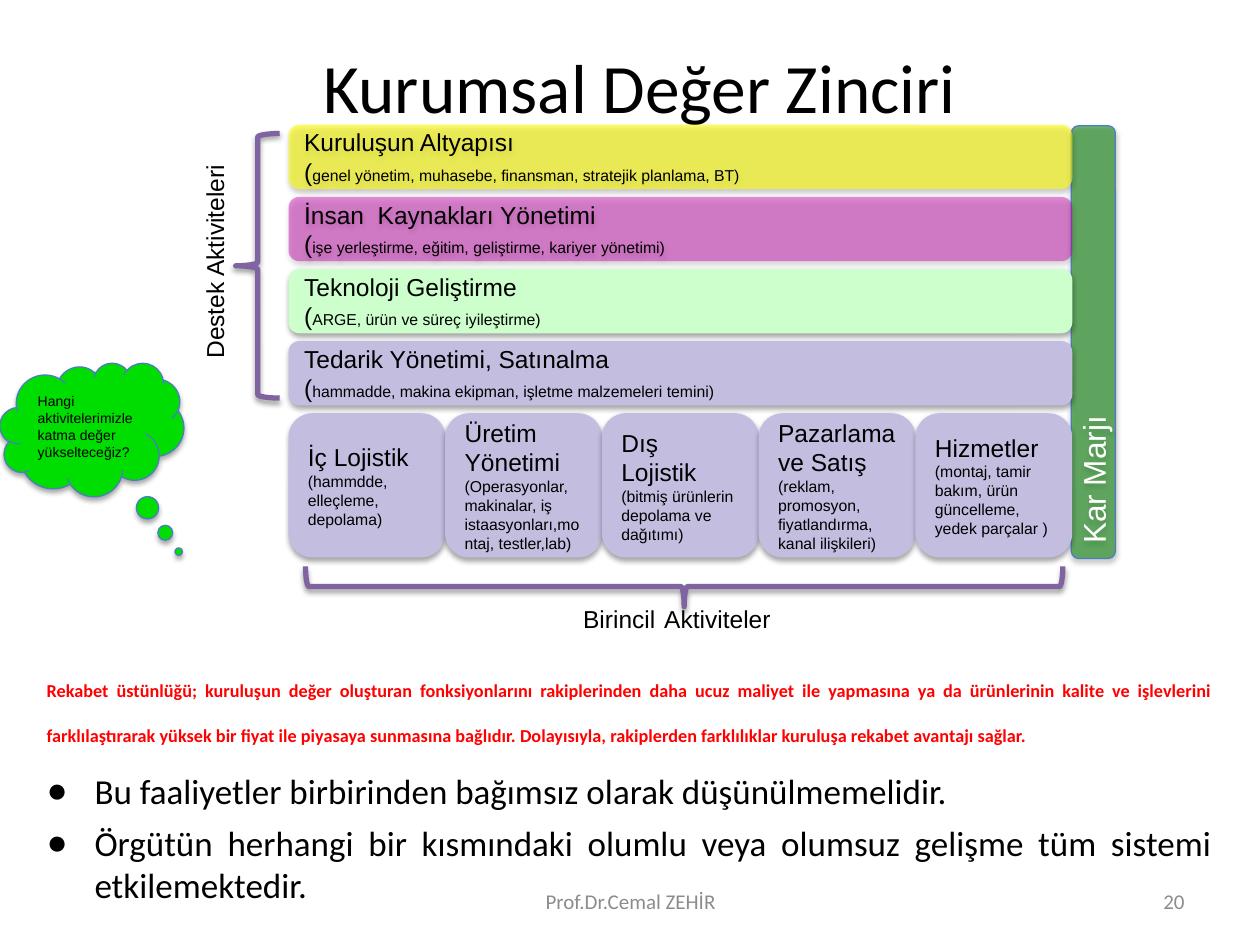
from lxml import etree
from pptx import Presentation
from pptx.dml.color import RGBColor
from pptx.enum.shapes import MSO_SHAPE
from pptx.enum.text import MSO_ANCHOR, MSO_AUTO_SIZE, PP_ALIGN
from pptx.oxml.ns import qn
from pptx.util import Inches, Pt

ROUND, BRACE, CLOUD = MSO_SHAPE.ROUNDED_RECTANGLE, MSO_SHAPE.LEFT_BRACE, MSO_SHAPE.CLOUD_CALLOUT
LEFT, MID, RIGHT, JUST = PP_ALIGN.LEFT, PP_ALIGN.CENTER, PP_ALIGN.RIGHT, PP_ALIGN.JUSTIFY
FIXED, CENTRE, TOP = MSO_AUTO_SIZE.NONE, MSO_ANCHOR.MIDDLE, MSO_ANCHOR.TOP

THEME = {
    "sans": "Arial", "text": "Calibri",
    "black": "000000", "white": "FFFFFF", "grey": "8C8C8C", "red": "FF0000",
    "lilac": "C3BDE0", "mint": "CCFFCC", "yellow": "FFFF00", "pink": "C706AE",
    "green": "008000", "lime": "00DD00", "edge": "4B7EBC", "brace": "8064A2",
    "title": 39.6, "list": 20, "large": 18, "head": 14, "foot": 12, "note": 9, "small": 8,
}

deck = Presentation()
deck.slide_width, deck.slide_height = Inches(10), Inches(7.5)
slide = deck.slides.add_slide(deck.slide_layouts[1])


def write(frame, paras, font="sans", tint="black", align=LEFT, wrap=True):
    frame.word_wrap = wrap
    frame.auto_size = FIXED
    for i, runs in enumerate(paras):
        para = frame.paragraphs[0] if i == 0 else frame.add_paragraph()
        para.alignment = align
        para.font.name = THEME[font]
        para.font.color.rgb = RGBColor.from_string(THEME[tint])
        sizes = {size for _, size in runs}
        for text, size in runs:
            run = para.add_run()
            run.text = text
            if len(sizes) > 1:
                run.font.size = Pt(THEME[size])
        if len(sizes) == 1:
            para.font.size = Pt(THEME[sizes.pop()])


def draw(kind, box, fill=None, alpha=100, line=None, width=0.75, turn=0, shade=35):
    shape = slide.shapes.add_shape(kind, *map(Inches, box))
    shape.rotation = turn
    if fill:
        shape.fill.solid()
        shape.fill.fore_color.rgb = RGBColor.from_string(THEME[fill])
        if alpha < 100:
            tone = shape._element.spPr.find(".//" + qn("a:srgbClr"))
            etree.SubElement(tone, qn("a:alpha"), val=str(alpha * 1000))
    else:
        shape.fill.background()
    if line:
        shape.line.color.rgb = RGBColor.from_string(THEME[line])
        shape.line.width = Pt(width)
    else:
        shape.line.fill.background()
    shape.shadow.inherit = False
    cast = etree.SubElement(
        shape._element.spPr.find(qn("a:effectLst")), qn("a:outerShdw"),
        blurRad=str(Pt(3.1)), dist=str(Pt(1.8)), dir="5400000", rotWithShape="0")
    tone = etree.SubElement(cast, qn("a:srgbClr"), val=THEME["black"])
    etree.SubElement(tone, qn("a:alpha"), val=str(shade * 1000))
    return shape


title = slide.shapes.title
title.left, title.top, title.width, title.height = map(Inches, (0.83, 0.44, 8.5, 0.48))
write(title.text_frame, [[("Kurumsal Değer Zinciri", "title")]], "text", align=MID)
title.text_frame.vertical_anchor = CENTRE

X, Y, COL, ROW, BAR = 2.29, 0.99, 1.244, 0.5725, 0.51

margin = draw(ROUND, (6.96, 2.54, 6 * ROW, 0.35), "green", 54, "edge", turn=270)
write(margin.text_frame, [[("Kar Marjı", "large")]], tint="white")

support = [
    ("Kuruluşun Altyapısı", "genel yönetim, muhasebe, finansman, stratejik planlama, BT)", "yellow", 58),
    ("İnsan  Kaynakları Yönetimi", "işe yerleştirme, eğitim, geliştirme, kariyer yönetimi)", "pink", 45),
    ("Teknoloji Geliştirme", "ARGE, ürün ve süreç iyileştirme)", "mint", 100),
    ("Tedarik Yönetimi, Satınalma", "hammadde, makina ekipman, işletme malzemeleri temini)", "lilac", 100),
]
for i, (head, note, fill, alpha) in enumerate(support):
    bar = draw(ROUND, (X, Y + i * ROW, 5 * COL, BAR), fill, alpha)
    write(bar.text_frame, [[(head, "head")], [("(", "head"), (note, "note")]])

primary = [
    ("İç Lojistik", "(hammdde, elleçleme, depolama)"),
    ("Üretim Yönetimi", "(Operasyonlar, makinalar, iş istaasyonları,montaj, testler,lab)"),
    ("Dış Lojistik", "(bitmiş ürünlerin depolama ve dağıtımı)"),
    ("Pazarlama ve Satış", "(reklam, promosyon, fiyatlandırma, kanal ilişkileri)"),
    ("Hizmetler", "(montaj, tamir bakım, ürün güncelleme, yedek parçalar )"),
]
for i, (head, note) in enumerate(primary):
    card = draw(ROUND, (X + i * COL, Y + 4 * ROW, COL, 2 * ROW), "lilac")
    write(card.text_frame, [[(head, "head")], [(note, "note")]])

for box, turn in [((1.87, 1.06, 0.35, 2.1), 0), ((5.27, 1.65, 0.32, 6.01), 270)]:
    draw(BRACE, box, line="brace", width=3, turn=turn, shade=38)

cloud = draw(CLOUD, (0, 2.88, 1.46, 1.06), "lime", line="edge")
cloud.adjustments[0], cloud.adjustments[1] = 0.472, 0.914
write(cloud.text_frame, [[("Hangi aktivitelerimizle katma değer yükselteceğiz?", "small")]])

labels = [
    ((0.83, 1.9, 1.75, 0.34), 270, [("Destek Aktiviteleri", "head")], "sans", "black", LEFT, False, TOP),
    ((4.53, 4.69, 1.73, 0.51), 0, [("Birincil", "head"), (" ", "large"), ("Aktiviteler", "head")],
     "sans", "black", LEFT, False, TOP),
    ((3.42, 6.95, 3.17, 0.4), 0, [("Prof.Dr.Cemal ZEHİR", "foot")], "text", "grey", MID, True, CENTRE),
    ((7.17, 6.95, 2.33, 0.4), 0, [("20", "foot")], "text", "grey", RIGHT, True, CENTRE),
]
for box, turn, runs, font, tint, align, wrap, anchor in labels:
    label = slide.shapes.add_textbox(*map(Inches, box))
    label.rotation = turn
    write(label.text_frame, [runs], font, tint, align, wrap)
    label.text_frame.vertical_anchor = anchor

body = slide.placeholders[1]
body.left, body.top, body.width, body.height = map(Inches, (0.27, 5.25, 9.45, 2.25))
write(body.text_frame, [
    [("Rekabet üstünlüğü; kuruluşun değer oluşturan fonksiyonlarını rakiplerinden daha ucuz maliyet ile "
      "yapmasına ya da ürünlerinin kalite ve işlevlerini farklılaştırarak yüksek bir fiyat ile piyasaya "
      "sunmasına bağlıdır. Dolayısıyla, rakiplerden farklılıklar kuruluşa rekabet avantajı sağlar.", "large")],
    [("Bu faaliyetler birbirinden bağımsız olarak düşünülmemelidir.", "list")],
    [("Örgütün herhangi bir kısmındaki olumlu veya olumsuz gelişme tüm sistemi etkilemektedir.", "list")],
], "text", align=JUST)
lead, *points = body.text_frame.paragraphs
lead.font.bold = True
lead.font.color.rgb = RGBColor.from_string(THEME["red"])
lead.line_spacing = 1.2
lead.space_before = Pt(0)
lead.runs[0]._r.get_or_add_rPr().set("baseline", "30000")
props = lead._p.get_or_add_pPr()
props.set("marL", "0")
props.set("indent", "0")
props.find(qn("a:defRPr")).addprevious(etree.Element(qn("a:buNone")))
for point in points:
    point.space_before = Pt(6)
    props = point._p.get_or_add_pPr()
    props.set("marL", str(Inches(0.38)))
    props.set("indent", str(-Inches(0.38)))
    props.find(qn("a:defRPr")).addprevious(etree.Element(qn("a:buChar"), char="●"))

deck.save("out.pptx")
